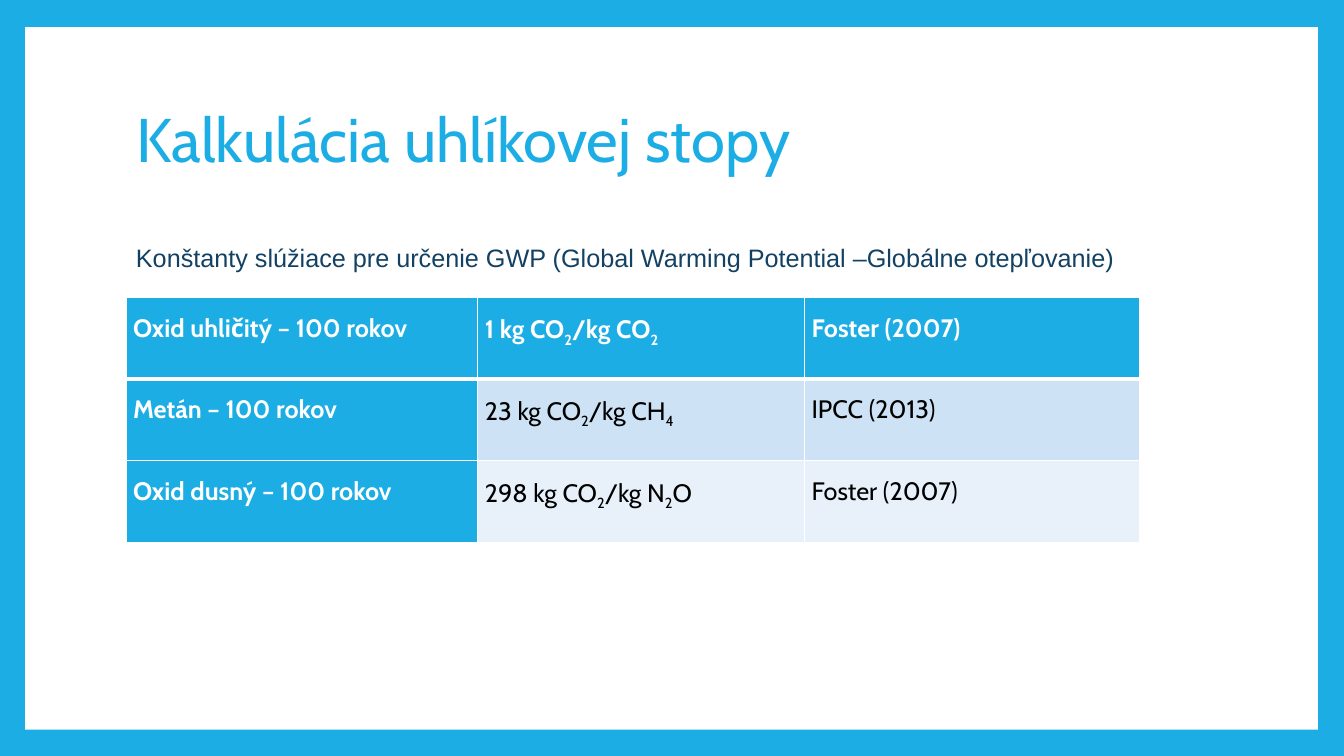
import pptx
import pptx.dml.color
import pptx.enum.shapes
import pptx.enum.text
import pptx.oxml
import pptx.oxml.ns
import pptx.util

Inches = pptx.util.Inches
Pt = pptx.util.Pt
ALIGN = pptx.enum.text.PP_ALIGN
ANCHOR = pptx.enum.text.MSO_ANCHOR

COLOURS = {
    "blue": "1CADE4",
    "white": "FFFFFF",
    "black": "000000",
    "navy": "134163",
    "band_dark": "CDE3F5",
    "band_light": "E8F1FA",
}
COLUMN_WIDTHS = [3.49, 3.24, 3.32]
ROW_HEIGHT = 0.81
ROW_BANDS = ["blue", "band_dark", "band_light"]
GWP_ROWS = [
    ["Oxid uhličitý – 100 rokov", "1 kg CO_2_/kg CO_2", "Foster (2007)"],
    ["Metán – 100 rokov", "23 kg CO_2_/kg CH_4", "IPCC (2013)"],
    ["Oxid dusný – 100 rokov", "298 kg CO_2_/kg N_2_O", "Foster (2007)"],
]


def rgb(name):
    return pptx.dml.color.RGBColor.from_string(COLOURS[name])


def apply_format(target, values):
    for name, value in values.items():
        setattr(target, name, value)


def box(left, top, width, height):
    return {
        "left": Inches(left),
        "top": Inches(top),
        "width": Inches(width),
        "height": Inches(height),
    }


def fill_solid(fill, colour):
    fill.solid()
    fill.fore_color.rgb = rgb(colour)


def write_text(paragraph, text, colour, font_format, paragraph_format):
    apply_format(paragraph, paragraph_format)
    for index, part in enumerate(text.split("_")):
        run = paragraph.add_run()
        run.text = part
        apply_format(run.font, font_format)
        run.font.color.rgb = rgb(colour)
        if index % 2:
            run._r.get_or_add_rPr().set("baseline", "-25000")


def add_panel(slide):
    panel = slide.shapes.add_shape(
        pptx.enum.shapes.MSO_SHAPE.RECTANGLE, **box(0.25, 0.27, 12.82, 6.97)
    )
    panel.shadow.inherit = False
    fill_solid(panel.fill, "white")
    panel.line.fill.background()
    panel.element.getparent().insert(2, panel.element)


def add_title(slide, text):
    title = slide.shapes.title
    apply_format(title, box(1.25, 0.67, 10.8, 1.48))
    apply_format(title.text_frame, {"vertical_anchor": ANCHOR.MIDDLE, "word_wrap": True})
    write_text(
        title.text_frame.paragraphs[0], text, "blue",
        {"name": "Cabin", "size": Pt(44)},
        {"alignment": ALIGN.LEFT, "line_spacing": 0.9},
    )


def add_caption(slide, text):
    caption = slide.shapes.add_textbox(**box(1.25, 2.35, 11.12, 0.4))
    frame = caption.text_frame
    apply_format(frame, {
        "word_wrap": True,
        "auto_size": pptx.enum.text.MSO_AUTO_SIZE.SHAPE_TO_FIT_TEXT,
    })
    write_text(
        frame.paragraphs[0], text, "navy",
        {"name": "Arial", "size": Pt(18)}, {"alignment": ALIGN.LEFT},
    )


def set_borders(cell, widths):
    properties = cell._tc.get_or_add_tcPr()
    for side, width in widths.items():
        properties.append(pptx.oxml.parse_xml(
            f'<a:ln{side} {pptx.oxml.ns.nsdecls("a")} w="{Pt(width)}">'
            f'<a:solidFill><a:srgbClr val="{COLOURS["white"]}"/></a:solidFill>'
            f'</a:ln{side}>'
        ))


def format_cell(cell, text, row, column):
    is_header = row == 0 or column == 0
    set_borders(cell, {
        "L": 1,
        "R": 1,
        "T": 3 if row == 1 else 1,
        "B": 3 if row == 0 else 1,
    })
    fill_solid(cell.fill, "blue" if is_header else ROW_BANDS[row])
    apply_format(cell, {
        "margin_left": Inches(0.07),
        "margin_right": Inches(0.07),
        "margin_top": 0,
        "margin_bottom": 0,
        "vertical_anchor": ANCHOR.TOP,
    })
    write_text(
        cell.text_frame.paragraphs[0], text, "white" if is_header else "black",
        {"name": "Cabin", "size": Pt(18), "bold": is_header},
        {"alignment": ALIGN.JUSTIFY, "line_spacing": 1.5},
    )


def add_gwp_table(slide):
    table = slide.shapes.add_table(
        len(GWP_ROWS), len(COLUMN_WIDTHS),
        **box(1.25, 2.95, sum(COLUMN_WIDTHS), ROW_HEIGHT * len(GWP_ROWS)),
    ).table
    for column, width in zip(table.columns, COLUMN_WIDTHS):
        column.width = Inches(width)
    for row, texts in enumerate(GWP_ROWS):
        table.rows[row].height = Inches(ROW_HEIGHT)
        for column, text in enumerate(texts):
            format_cell(table.cell(row, column), text, row, column)


def main():
    presentation = pptx.Presentation()
    apply_format(presentation, {
        "slide_width": Inches(13.33),
        "slide_height": Inches(7.5),
    })
    slide = presentation.slides.add_slide(presentation.slide_layouts[5])
    fill_solid(slide.background.fill, "blue")
    add_panel(slide)
    add_title(slide, "Kalkulácia uhlíkovej stopy")
    add_gwp_table(slide)
    add_caption(
        slide,
        "Konštanty slúžiace pre určenie GWP "
        "(Global Warming Potential –Globálne otepľovanie)",
    )
    presentation.save("out.pptx")


if __name__ == "__main__":
    main()
